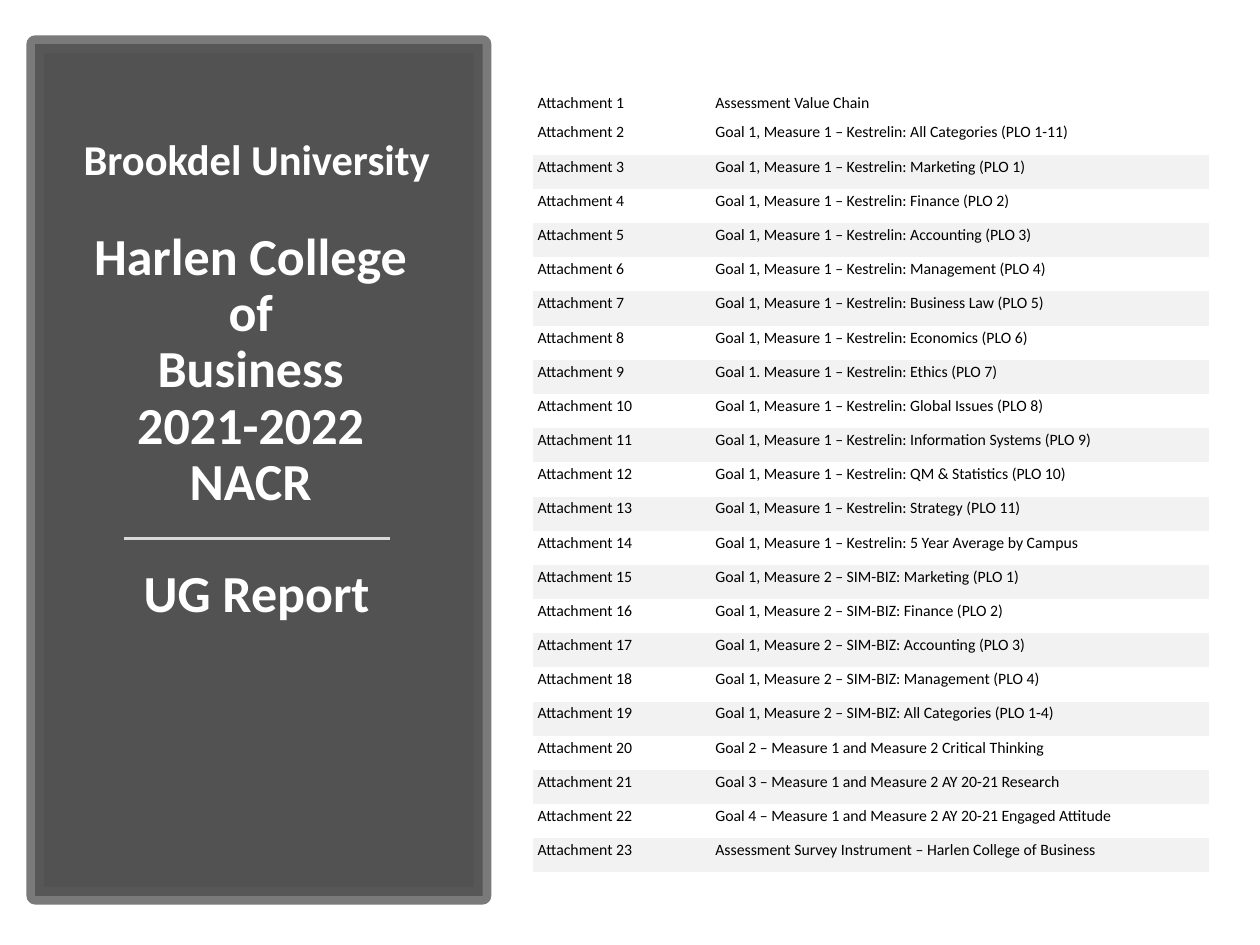
import pptx
import pptx.dml.color
import pptx.enum.shapes
import pptx.enum.text
import pptx.oxml.ns
import pptx.util
from lxml import etree
from pptx.util import Cm

FONT = "Calibri"
PLAIN_TABLE_STYLE = "{2D5ABB26-0587-4C30-8999-92F81FD0307C}"
TITLE_LINES = [
    ("Brookdel University", 24.3, 0),
    ("Harlen College ", 29.7, 26.2),
    ("of ", 29.7, 0),
    ("Business ", 29.7, 0),
    ("2021-2022 ", 29.7, 0),
    ("NACR ", 29.7, 0),
    ("UG Report", 29.7, 32.1),
]
EXAM = "Goal 1, Measure 1 – Kestrelin: "
SIMULATION = "Goal 1, Measure 2 – SIM-BIZ: "
ATTACHMENTS = [
    "Assessment Value Chain",
    EXAM + "All Categories (PLO 1-11)",
    EXAM + "Marketing (PLO 1)",
    EXAM + "Finance (PLO 2)",
    EXAM + "Accounting (PLO 3)",
    EXAM + "Management (PLO 4)",
    EXAM + "Business Law (PLO 5)",
    EXAM + "Economics (PLO 6)",
    "Goal 1. Measure 1 – Kestrelin: Ethics (PLO 7)",
    EXAM + "Global Issues (PLO 8)",
    EXAM + "Information Systems (PLO 9)",
    EXAM + "QM & Statistics (PLO 10)",
    EXAM + "Strategy (PLO 11)",
    EXAM + "5 Year Average by Campus",
    SIMULATION + "Marketing (PLO 1)",
    SIMULATION + "Finance (PLO 2)",
    SIMULATION + "Accounting (PLO 3)",
    SIMULATION + "Management (PLO 4)",
    SIMULATION + "All Categories (PLO 1-4)",
    "Goal 2 – Measure 1 and Measure 2 Critical Thinking",
    "Goal 3 – Measure 1 and Measure 2 AY 20-21 Research",
    "Goal 4 – Measure 1 and Measure 2 AY 20-21 Engaged Attitude",
    "Assessment Survey Instrument – Harlen College of Business",
]


def color(value):
    return pptx.dml.color.RGBColor.from_string(value)


def add_child(parent, tag, **attributes):
    return etree.SubElement(parent, pptx.oxml.ns.qn(tag), attributes)


def paint(fill, value, opacity=100):
    fill.solid()
    fill.fore_color.rgb = color(value)
    if opacity < 100:
        color_element = fill._xPr.find(".//" + pptx.oxml.ns.qn("a:srgbClr"))
        add_child(color_element, "a:alpha", val=str(opacity * 1000))


def format_runs(paragraph, size, value, bold=False):
    for run in paragraph.runs:
        run.font.name = FONT
        run.font.size = pptx.util.Pt(size)
        run.font.bold = bold
        run.font.color.rgb = color(value)


def add_panel(slide):
    panel = slide.shapes.add_shape(
        pptx.enum.shapes.MSO_SHAPE.RECTANGLE, Cm(0.71), Cm(0.89), Cm(9.02), Cm(17.17)
    )
    panel.shadow.inherit = False
    paint(panel.fill, "404040", 90)
    panel.line.width = pptx.util.Pt(10)
    paint(panel.line.fill, "595959", 80)
    add_child(panel.line._ln, "a:round")


def add_title(slide):
    title = slide.shapes.add_textbox(Cm(1.02), Cm(1.9), Cm(8.31), Cm(10.8))
    frame = title.text_frame
    frame.word_wrap = True
    frame.vertical_anchor = pptx.enum.text.MSO_ANCHOR.BOTTOM
    frame.text = "\n".join(text for text, size, gap in TITLE_LINES)
    for paragraph, (text, size, gap) in zip(frame.paragraphs, TITLE_LINES):
        paragraph.alignment = pptx.enum.text.PP_ALIGN.CENTER
        paragraph.line_spacing = 0.9
        paragraph.space_before = pptx.util.Pt(gap)
        format_runs(paragraph, size, "FFFFFF", bold=True)


def add_divider(slide):
    divider = slide.shapes.add_connector(
        pptx.enum.shapes.MSO_CONNECTOR.STRAIGHT, Cm(2.49), Cm(10.86), Cm(7.87), Cm(10.86)
    )
    divider.line.width = pptx.util.Pt(1.75)
    divider.line.color.rgb = color("D9D9D9")
    add_child(divider._element.spPr, "a:effectLst")


def fill_cell(cell, text, is_first, is_striped):
    cell.margin_left = Cm(0.1)
    cell.margin_right = Cm(0.05)
    cell.margin_top = Cm(0.15 if is_first else 0.05)
    cell.margin_bottom = Cm(0.15)
    if is_first:
        cell.vertical_anchor = pptx.enum.text.MSO_ANCHOR.BOTTOM
    if is_striped:
        paint(cell.fill, "F2F2F2")
    else:
        cell.fill.background()
    cell.text_frame.text = text
    format_runs(cell.text_frame.paragraphs[0], 9, "000000")


def add_attachment_table(slide):
    frame = slide.shapes.add_table(
        len(ATTACHMENTS), 2, Cm(10.74), Cm(1.7), Cm(13.64), Cm(15.88)
    )
    table = frame.table
    table.first_row = False
    table.horz_banding = False
    style = table._tbl.tblPr.find(pptx.oxml.ns.qn("a:tableStyleId"))
    style.text = PLAIN_TABLE_STYLE
    table.columns[0].width = Cm(3.58)
    table.columns[1].width = Cm(10.06)
    for index, description in enumerate(ATTACHMENTS):
        is_first = index == 0
        is_striped = index > 0 and index % 2 == 0
        table.rows[index].height = Cm(0.73 if is_first else 0.69)
        for column, text in enumerate((f"Attachment {index + 1}", description)):
            fill_cell(table.cell(index, column), text, is_first, is_striped)


def main():
    presentation = pptx.Presentation()
    presentation.slide_width = Cm(25.4)
    presentation.slide_height = Cm(19.05)
    slide = presentation.slides.add_slide(presentation.slide_layouts[6])
    add_panel(slide)
    add_title(slide)
    add_divider(slide)
    add_attachment_table(slide)
    presentation.save("out.pptx")


if __name__ == "__main__":
    main()
